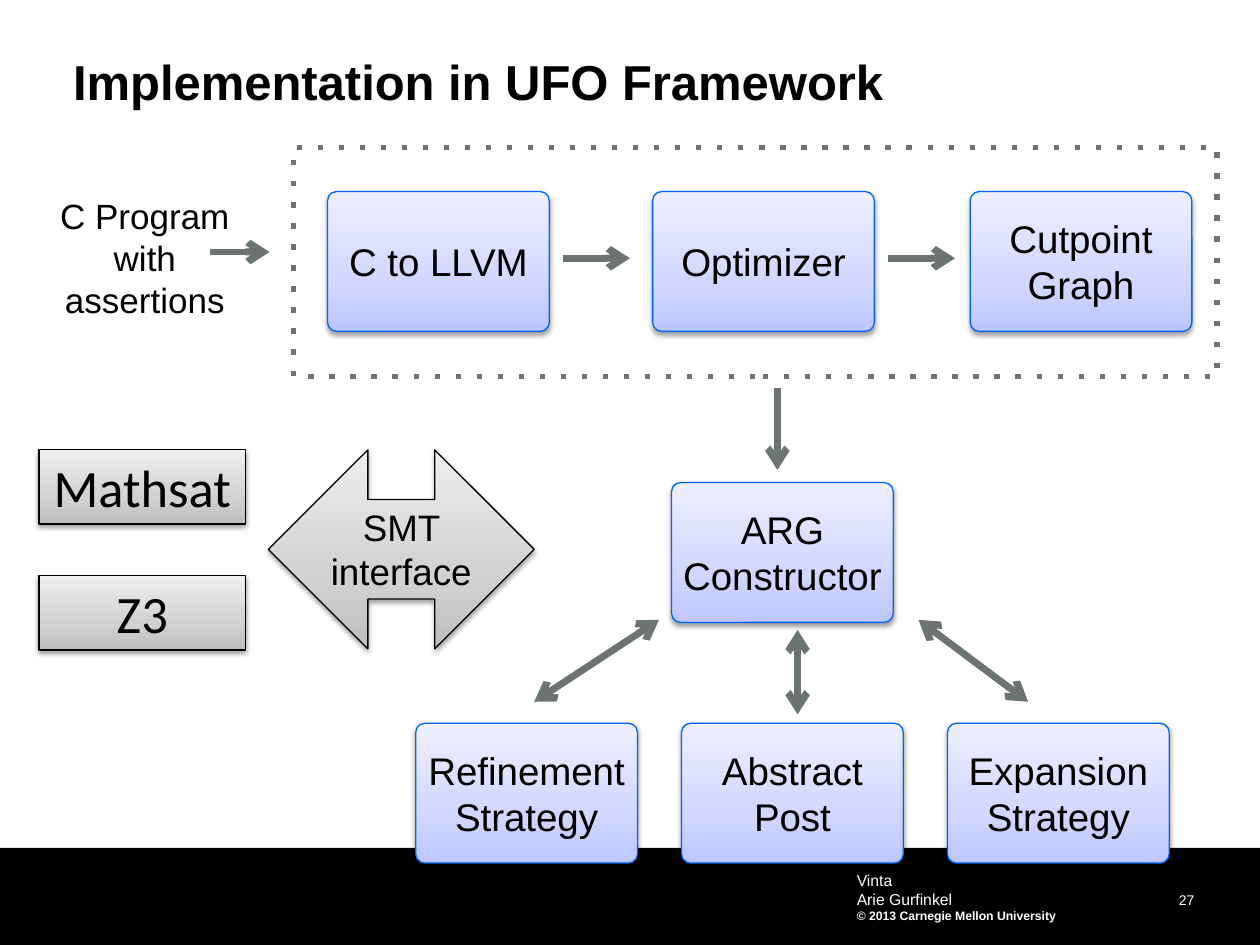
from lxml import etree
from pptx import Presentation
from pptx import util as u
from pptx.dml.color import RGBColor
from pptx.enum import shapes, text
from pptx.oxml import parse_xml
from pptx.oxml.ns import nsdecls, qn

# Content
TITLE = "Implementation in UFO Framework"
INPUT_LINES = ["C Program", "with assertions"]
FOOTER = [("Vinta", 9, False), ("Arie Gurfinkel", 9, False),
          ("© 2013 Carnegie Mellon University", 7, True)]
PAGE_NUMBER = "27"
STAGES = [  # label, left, top
    ("C to LLVM", 2.6, 1.52),
    ("Optimizer", 5.18, 1.52),
    ("Cutpoint Graph", 7.7, 1.52),
    ("ARG Constructor", 5.33, 3.83),
]
STRATEGIES = ["Refinement Strategy", "Abstract Post", "Expansion Strategy"]
SOLVERS = ["Mathsat", "Z3"]
ARROWS = [  # from, to, arrowhead at both ends
    ((1.67, 2), (2.14, 2), False),
    ((4.47, 2.05), (5, 2.05), False),
    ((7.05, 2.05), (7.58, 2.05), False),
    ((6.17, 3.08), (6.17, 3.73), False),
    ((5.23, 4.92), (4.24, 5.57), True),
    ((6.33, 5), (6.33, 5.67), True),
    ((7.29, 4.92), (8.16, 5.57), True),
]

# Style
BLACK, WHITE, SLATE, BLUE = "000000", "FFFFFF", "6C7472", "0064F9"
BLUES = [(0, "BDC6FF"), (35, "D1D7FF"), (100, "EEF0FF")]
GREYS = [(0, "BDBDBD"), (35, "D1D1D1"), (100, "EEEEEE")]
BOX_SIZE = (1.76, 1.11)
PADDING = (0.07, 0.04)
SHAPE = shapes.MSO_SHAPE
ALIGN = text.PP_ALIGN
MIDDLE = text.MSO_ANCHOR.MIDDLE

presentation = Presentation()
presentation.slide_width, presentation.slide_height = u.Inches(10), u.Inches(7.5)
slide = presentation.slides.add_slide(presentation.slide_layouts[6])


def color(value):
    return RGBColor.from_string(value)


def inches(values):
    return [u.Inches(value) for value in values]


def write(shape, lines, size, tint=BLACK, bold=False, align=ALIGN.CENTER,
          anchor=text.MSO_ANCHOR.TOP, padding=(0, 0), font="Arial"):
    frame = shape.text_frame
    frame.text = "\n".join(lines)
    frame.word_wrap = True
    frame.vertical_anchor = anchor
    frame.margin_left = frame.margin_right = u.Inches(padding[0])
    frame.margin_top = frame.margin_bottom = u.Inches(padding[1])
    for paragraph in frame.paragraphs:
        paragraph.alignment = align
        for run in paragraph.runs:
            run.font.name, run.font.size, run.font.bold = font, u.Pt(size), bold
            run.font.color.rgb = color(tint)
    return frame.paragraphs


def add_text(place, lines, size, **style):
    return write(slide.shapes.add_textbox(*inches(place)), lines, size, **style)


def add_plain(kind, place):
    shape = slide.shapes.add_shape(kind, *inches(place))
    shape.shadow.inherit = False
    return shape


def add_raised(kind, place, stops, outline):
    """Shape with an upward gradient and a soft shadow below."""
    shape = add_plain(kind, place)
    shape.line.color.rgb = color(outline)
    shape.line.width = u.Pt(0.75)
    stop_xml = "".join(f'<a:gs pos="{position * 1000}"><a:srgbClr val="{tint}"/></a:gs>'
                       for position, tint in stops)
    properties = shape._element.spPr
    properties.find(qn("a:prstGeom")).addnext(parse_xml(
        f'<a:gradFill {nsdecls("a")} rotWithShape="1"><a:gsLst>{stop_xml}</a:gsLst>'
        '<a:lin ang="16200000" scaled="0"/></a:gradFill>'))
    properties.find(qn("a:effectLst")).append(parse_xml(
        f'<a:outerShdw {nsdecls("a")} blurRad="{u.Pt(3.1)}" dist="{u.Pt(1.6)}" '
        'dir="5400000" rotWithShape="0"><a:srgbClr val="000000">'
        '<a:alpha val="38000"/></a:srgbClr></a:outerShdw>'))
    return shape


def add_box(label, left, top):
    box = add_raised(SHAPE.ROUNDED_RECTANGLE, (left, top, *BOX_SIZE), BLUES, BLUE)
    box.adjustments[0] = 0.065
    write(box, [label], 22, anchor=MIDDLE)


def add_arrow(start, end, both):
    arrow = slide.shapes.add_connector(shapes.MSO_CONNECTOR.STRAIGHT,
                                       *inches(start + end))
    arrow.line.color.rgb = color(SLATE)
    arrow.line.width = u.Pt(4)
    line = arrow.line._get_or_add_ln()
    for tag in ["a:headEnd", "a:tailEnd"] if both else ["a:tailEnd"]:
        etree.SubElement(line, qn(tag), type="arrow")
    etree.SubElement(arrow._element.spPr, qn("a:effectLst"))


# Footer band
band = add_plain(SHAPE.RECTANGLE, (0, 6.73, 10, 0.77))
band.fill.solid()
band.fill.fore_color.rgb = color(BLACK)
band.line.fill.background()
number = add_text((8.56, 7.03, 0.92, 0.18), [PAGE_NUMBER], 8, tint=WHITE,
                  align=ALIGN.RIGHT, anchor=MIDDLE)
number[0].line_spacing = u.Pt(13)
credits = add_text((6.75, 6.86, 2.5, 0.52), [line for line, _, _ in FOOTER], 9,
                   tint=WHITE, align=ALIGN.LEFT, anchor=MIDDLE, padding=(0.05, 0.05))
for paragraph, (_, size, bold) in zip(credits, FOOTER):
    paragraph.runs[0].font.size = u.Pt(size)
    paragraph.runs[0].font.bold = bold

# Title and program input
title = add_text((0.58, 0.46, 8.92, 0.42), [TITLE], 28, bold=True, align=ALIGN.LEFT)
title[0].line_spacing = 0.9
add_text((0.33, 1.5, 1.64, 1.08), INPUT_LINES, 20, padding=PADDING)

# Front-end frame
frame = add_plain(SHAPE.RECTANGLE, (2.33, 1.17, 7.33, 1.82))
frame.fill.background()
frame.line.color.rgb = color(SLATE)
frame.line.width = u.Pt(3)
etree.SubElement(frame.line._get_or_add_ln(), qn("a:prstDash"), val="dot")

# Pipeline stages, strategies and the arrows between them
for stage in STAGES:
    add_box(*stage)
for index, label in enumerate(STRATEGIES):
    add_box(label, 3.3 + 2.11 * index, 5.74)
for arrow_ends in ARROWS:
    add_arrow(*arrow_ends)

# Solvers and their interface
interface = add_raised(SHAPE.LEFT_RIGHT_ARROW, (2.13, 3.57, 2.11, 1.58), GREYS, BLACK)
write(interface, ["SMT interface"], 21, padding=PADDING)
for index, label in enumerate(SOLVERS):
    solver = add_raised(SHAPE.RECTANGLE, (0.31, 3.57 + index, 1.64, 0.59), GREYS, BLACK)
    write(solver, [label], 30, padding=PADDING, font="Calibri")

presentation.save("out.pptx")
